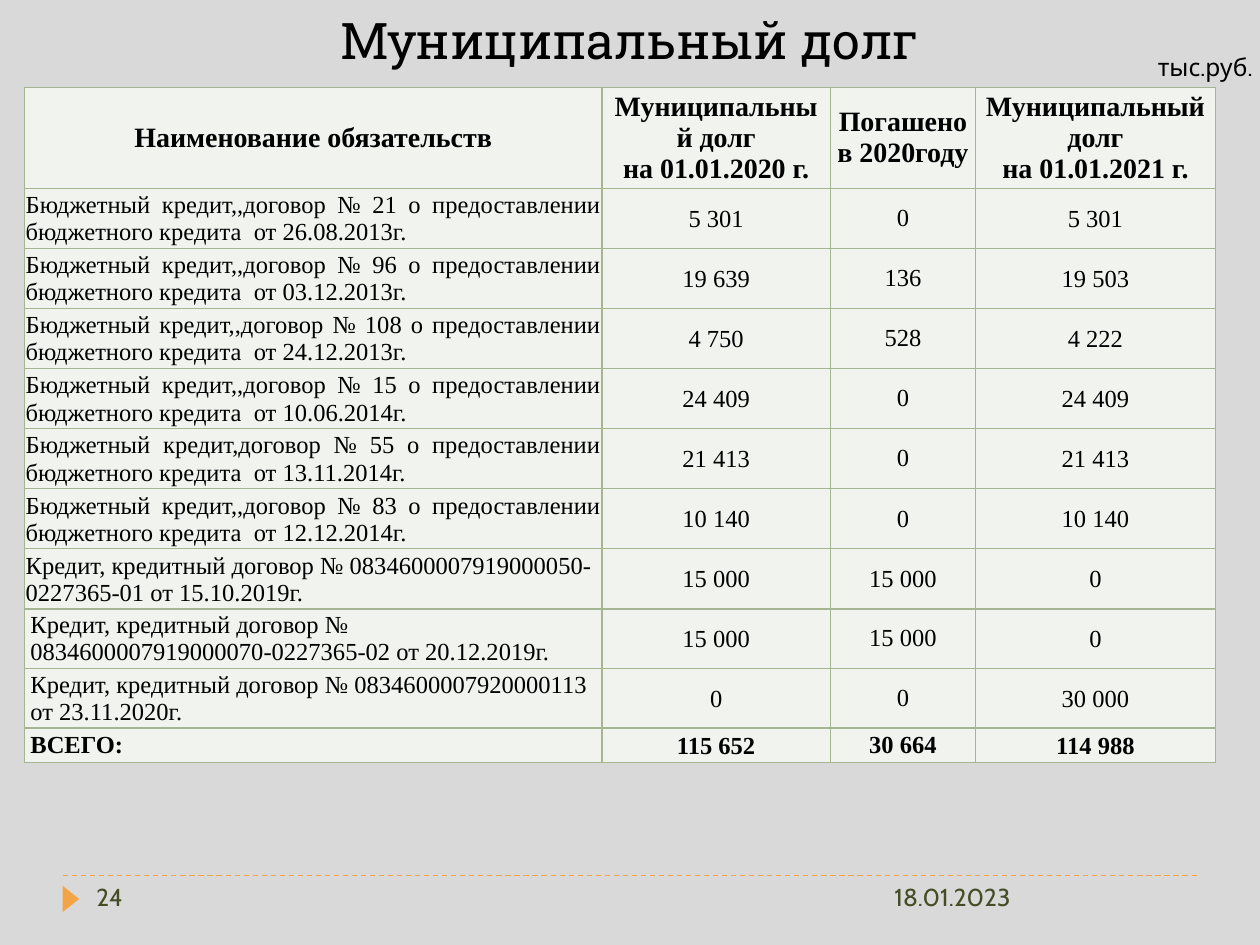
from dataclasses import dataclass
from lxml.etree import SubElement
from pptx import Presentation
from pptx.dml.color import RGBColor
from pptx.enum.dml import MSO_LINE
from pptx.enum.shapes import MSO_CONNECTOR, MSO_SHAPE
from pptx.enum.text import MSO_ANCHOR as Anchor, MSO_AUTO_SIZE, PP_ALIGN as Align
from pptx.oxml.ns import qn
from pptx.util import Pt


@dataclass(frozen=True)
class Theme:
    background: str = "D9D9D9"
    ink: str = "000000"
    footer: str = "444D26"
    accent: str = "F3A447"
    cell: str = "F0F3EE"
    border: str = "A5B592"
    title_font: str = "Roboto Slab"
    body_font: str = "Cabin"
    table_font: str = "Times New Roman"
    title_size: float = 28.8
    header_size: float = 16
    body_size: float = 14


THEME = Theme()
COLUMNS = (330, 130.5, 83, 137)
HEADER_HEIGHT, LOAN_HEIGHT, TOTAL_HEIGHT = 57.6, 34.1, 19.6
TIGHT, ROOMY = 0.7, 3.4

HEADER = (
    "Наименование обязательств",
    "Муниципальный долг\nна 01.01.2020 г.",
    "Погашено в 2020году",
    "Муниципальный долг\nна 01.01.2021 г.",
)
BUDGET_LOANS = (
    (",,", "21", "26.08.2013", "5 301", "0", "5 301"),
    (",,", "96", "03.12.2013", "19 639", "136", "19 503"),
    (",,", "108", "24.12.2013", "4 750", "528", "4 222"),
    (",,", "15", "10.06.2014", "24 409", "0", "24 409"),
    (",", "55", "13.11.2014", "21 413", "0", "21 413"),
    (",,", "83", "12.12.2014", "10 140", "0", "10 140"),
)
BANK_LOANS = (
    ("0834600007919000050-0227365-01", "15.10.2019", "15 000", "15 000", "0"),
    ("0834600007919000070-0227365-02", "20.12.2019", "15 000", "15 000", "0"),
    ("0834600007920000113", "23.11.2020", "0", "0", "30 000"),
)
TOTAL = ("ВСЕГО:", "115 652", "30 664", "114 988")


def rgb(code):
    return RGBColor.from_string(code)


def write(frame, text, *, font=THEME.body_font, size=THEME.body_size,
          color=THEME.ink, bold=False, align=Align.LEFT):
    """Fill a text frame, one paragraph for each line of text."""
    frame.text = text
    for paragraph in frame.paragraphs:
        paragraph.alignment = align
        for run in paragraph.runs:
            run.font.name = font
            run.font.size = Pt(size)
            run.font.bold = bold
            run.font.color.rgb = rgb(color)


def add_label(slide, text, left, top, width, height, *, margin_right=7.2, **style):
    frame = slide.shapes.add_textbox(Pt(left), Pt(top), Pt(width), Pt(height)).text_frame
    frame.word_wrap = True
    frame.margin_right = Pt(margin_right)
    write(frame, text, **style)


def add_title(slide, text, left, top, width, height):
    title = slide.shapes.title
    title.left, title.top, title.width, title.height = map(Pt, (left, top, width, height))
    frame = title.text_frame
    frame.auto_size = MSO_AUTO_SIZE.NONE
    frame.vertical_anchor = Anchor.BOTTOM
    write(frame, text, font=THEME.title_font, size=THEME.title_size, align=Align.CENTER)


def add_borders(cell):
    properties = cell._tc.get_or_add_tcPr()
    for side in ("a:lnL", "a:lnR", "a:lnT", "a:lnB"):
        line = SubElement(properties, qn(side), w=str(Pt(1)))
        fill = SubElement(line, qn("a:solidFill"))
        SubElement(fill, qn("a:srgbClr"), val=THEME.border)


def format_cell(cell, text, margin, **style):
    cell.margin_left = cell.margin_right = Pt(margin)
    cell.margin_top = Pt(TIGHT if margin == TIGHT else 0)
    cell.margin_bottom = Pt(0)
    cell.vertical_anchor = Anchor.MIDDLE
    add_borders(cell)
    cell.fill.solid()
    cell.fill.fore_color.rgb = rgb(THEME.cell)
    write(cell.text_frame, text, font=THEME.table_font, **style)


def debt_rows():
    """Return (obligation, its alignment, its margin, amounts) for each row."""
    rows = [
        (f"Бюджетный кредит{commas}договор № {number} о предоставлении "
         f"бюджетного кредита  от {date}г.", Align.JUSTIFY, TIGHT, amounts)
        for commas, number, date, *amounts in BUDGET_LOANS
    ]
    for index, (number, date, *amounts) in enumerate(BANK_LOANS):
        rows.append((f"Кредит, кредитный договор № {number} от {date}г.",
                     Align.LEFT, ROOMY if index else TIGHT, amounts))
    obligation, *amounts = TOTAL
    return rows + [(obligation, Align.LEFT, ROOMY, amounts)]


def add_debt_table(slide, left, top):
    rows = debt_rows()
    heights = [HEADER_HEIGHT] + [LOAN_HEIGHT] * (len(rows) - 1) + [TOTAL_HEIGHT]
    table = slide.shapes.add_table(len(heights), len(COLUMNS), Pt(left), Pt(top),
                                   Pt(sum(COLUMNS)), Pt(sum(heights))).table
    for column, width in zip(table.columns, COLUMNS):
        column.width = Pt(width)
    for row, height in zip(table.rows, heights):
        row.height = Pt(height)

    for column, heading in enumerate(HEADER):
        format_cell(table.cell(0, column), heading, ROOMY,
                    size=THEME.header_size, bold=True, align=Align.CENTER)
    for row, (obligation, align, margin, amounts) in enumerate(rows, 1):
        bold = row == len(rows)
        format_cell(table.cell(row, 0), obligation, margin, bold=bold, align=align)
        for column, amount in enumerate(amounts, 1):
            format_cell(table.cell(row, column), amount, ROOMY if column == 2 else TIGHT,
                        bold=bold, align=Align.CENTER)


def add_footer(slide, page, date, left, top, width, height):
    rule = slide.shapes.add_connector(MSO_CONNECTOR.STRAIGHT, Pt(left), Pt(top),
                                      Pt(left + width), Pt(top))
    rule.line.color.rgb = rgb(THEME.accent)
    rule.line.width = Pt(0.75)
    rule.line.dash_style = MSO_LINE.DASH
    SubElement(rule._element.spPr, qn("a:effectLst"))

    marker = slide.shapes.add_shape(MSO_SHAPE.ISOSCELES_TRIANGLE, Pt(left - 3),
                                    Pt(top + 8.6), Pt(15), Pt(9.4))
    marker.rotation = 90
    marker.shadow.inherit = False
    marker.fill.solid()
    marker.fill.fore_color.rgb = rgb(THEME.accent)
    marker.line.fill.background()

    add_label(slide, page, left + 12, top, 156, height, color=THEME.footer)
    add_label(slide, date, left + width - 180, top, 180, height, color=THEME.footer)


def main():
    deck = Presentation()
    deck.slide_width, deck.slide_height = Pt(720), Pt(540)
    slide = deck.slides.add_slide(deck.slide_layouts[5])
    slide.background.fill.solid()
    slide.background.fill.fore_color.rgb = rgb(THEME.background)

    add_footer(slide, "24", "18.01.2023", 36, 500.4, 648, 28.8)
    add_title(slide, "Муниципальный долг", 36, 0, 648, 43.5)
    add_label(slide, "тыс.руб.", 654.5, 26, 65.5, 24.5, margin_right=0)
    add_debt_table(slide, 14, 50)
    deck.save("out.pptx")


if __name__ == "__main__":
    main()
